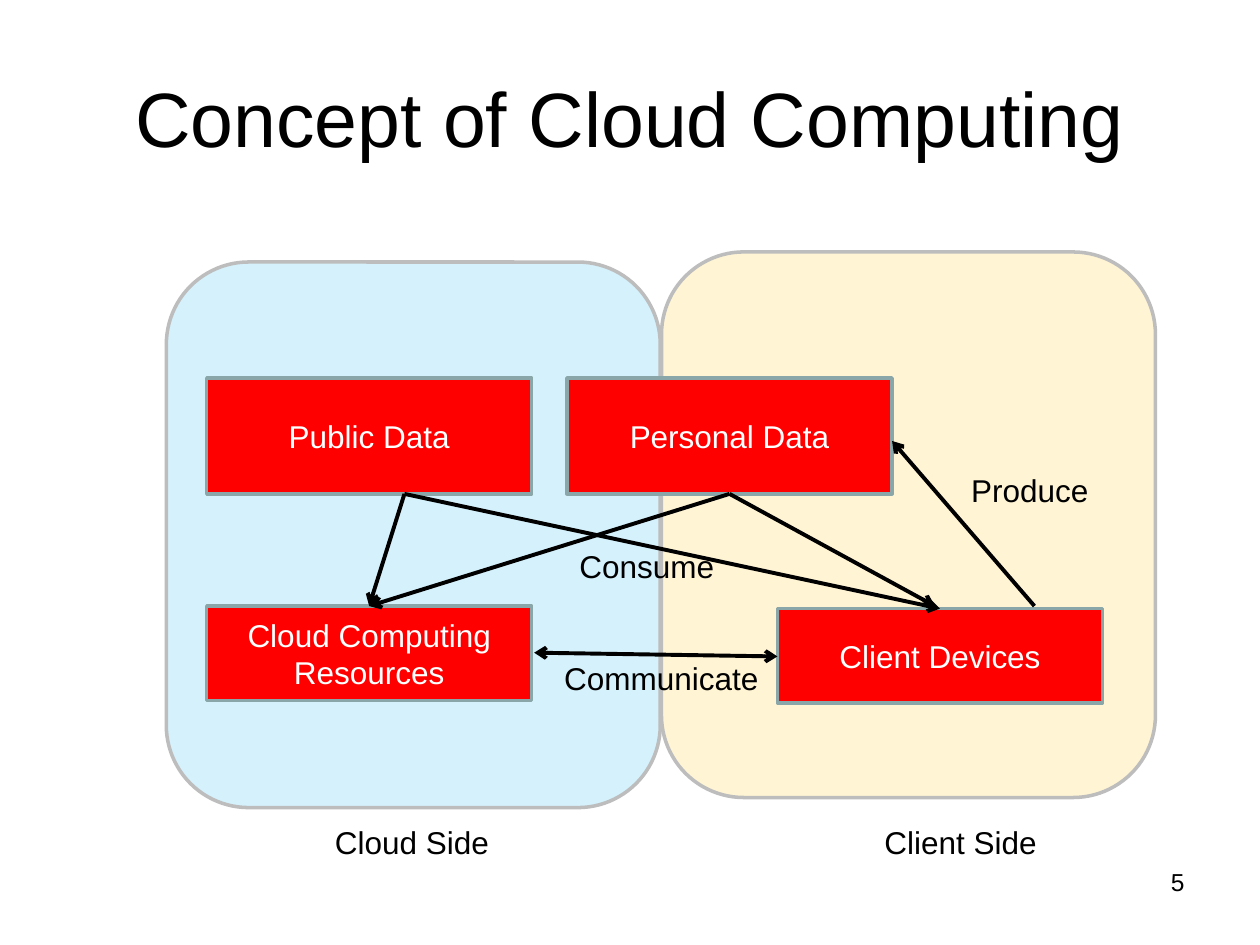
from lxml import etree
from pptx import Presentation
from pptx import util as u
from pptx.dml.color import RGBColor
from pptx.enum import shapes, text
from pptx.oxml import ns

COLORS = {
    "ink": "000000", "light": "FFFFFF", "box": "FF0000", "rim": "8AA6A8",
    "cloud": "00B0F0", "client": "FFC000", "edge": "BDBDBD",
}
LEFT, MID, RIGHT = text.PP_ALIGN.LEFT, text.PP_ALIGN.CENTER, text.PP_ALIGN.RIGHT
TOP, CENTER = text.MSO_ANCHOR.TOP, text.MSO_ANCHOR.MIDDLE


def color(name):
    return RGBColor.from_string(COLORS[name])


class Sketch:
    font = "Arial"
    size = 18

    def __init__(self, slide):
        self.slide = slide
        self.items = slide.shapes

    def letter(self, shape, words, ink="ink", size=None, align=LEFT,
               anchor=TOP, wrap=True):
        frame = shape.text_frame
        frame.text = words
        for key, value in {"word_wrap": wrap, "vertical_anchor": anchor}.items():
            setattr(frame, key, value)
        style = {"name": self.font, "size": u.Pt(size or self.size), "bold": False}
        for para in frame.paragraphs:
            para.alignment = align
            for run in para.runs:
                run.font.color.rgb = color(ink)
                for key, value in style.items():
                    setattr(run.font, key, value)

    def shape(self, kind, area, fill, line):
        item = self.items.add_shape(kind, *map(u.Inches, area))
        item.shadow.inherit = False
        item.fill.solid()
        item.fill.fore_color.rgb = color(fill)
        item.line.color.rgb = color(line)
        item.line.width = u.Pt(2)
        return item

    def panel(self, x, y, fill):
        item = self.shape(shapes.MSO_SHAPE.ROUNDED_RECTANGLE,
                          (x, y, 3.92, 4.33), fill, "edge")
        # The first colour in the shape properties is the fill
        tint = item._element.spPr.find(".//" + ns.qn("a:srgbClr"))
        etree.SubElement(tint, ns.qn("a:alpha"), val="17000")

    def box(self, x, y, high, words):
        item = self.shape(shapes.MSO_SHAPE.RECTANGLE, (x, y, 2.58, high), "box", "rim")
        self.letter(item, words, "light", align=MID, anchor=CENTER)

    def label(self, area, words, **style):
        item = self.items.add_textbox(*map(u.Inches, area))
        self.letter(item, words, **style)

    def arrow(self, start, end, both=False):
        item = self.items.add_connector(shapes.MSO_CONNECTOR.STRAIGHT,
                                        *map(u.Inches, start + end))
        item.line.color.rgb = color("ink")
        item.line.width = u.Pt(2.25)
        props = item._element.spPr
        line = props.find(ns.qn("a:ln"))
        for tag in ("a:headEnd", "a:tailEnd") if both else ("a:tailEnd",):
            etree.SubElement(line, ns.qn(tag), type="arrow")
        etree.SubElement(props, ns.qn("a:effectLst"))


def main():
    deck = Presentation()
    deck.slide_width, deck.slide_height = u.Inches(10), u.Inches(7.5)
    art = Sketch(deck.slides.add_slide(deck.slide_layouts[6]))

    # Two sides
    art.panel(5.25, 2, "client")
    art.panel(1.32, 2.08, "cloud")

    # Title
    art.label((0.5, 0.3, 9, 1.25), "Concept of Cloud Computing", size=44,
              align=MID, anchor=CENTER)

    # Data and machines
    for spot in (
        (1.64, 3, 0.92, "Public Data"),
        (4.5, 3, 0.92, "Personal Data"),
        (1.64, 4.81, 0.75, "Cloud Computing\nResources"),
        (6.17, 4.83, 0.75, "Client Devices"),
    ):
        art.box(*spot)

    # Flows: both kinds of data feed both machines
    public, private = (3.21, 3.92), (5.79, 3.92)
    cloud = (2.93, 4.81)
    for start, end in ((public, cloud), (public, (7.46, 4.83)),
                       (private, cloud), (private, (7.42, 4.81))):
        art.arrow(start, end)
    art.arrow((8.21, 4.81), (7.08, 3.5))
    art.arrow((6.17, 5.21), (4.24, 5.18), both=True)

    # Labels
    for x, y, wide, words in (
        (7.61, 3.69, 1.14, "Produce"),
        (4.5, 4.29, 1.28, "Consume"),
        (4.38, 5.18, 1.76, "Communicate"),
        (6.92, 6.48, 1.42, "Client Side"),
        (2.56, 6.48, 1.44, "Cloud Side"),
    ):
        art.label((x, y, wide, 0.4), words, wrap=False)

    # Page number
    art.label((7.17, 6.83, 2.33, 0.52), "5", size=14, align=RIGHT)

    deck.save("out.pptx")


if __name__ == "__main__":
    main()
